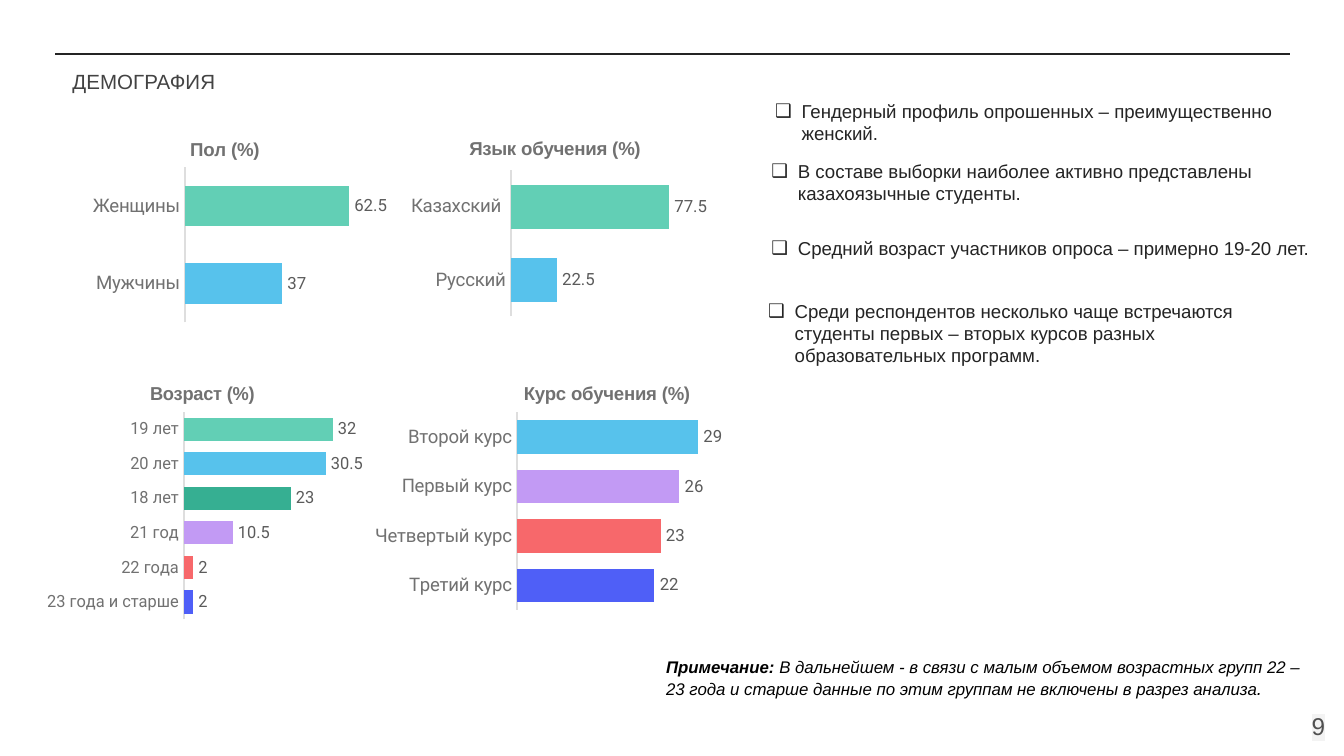
from dataclasses import dataclass
from typing import Any

from lxml import etree
from pptx import Presentation
from pptx import util as u
from pptx.chart import data as cd
from pptx.dml.color import RGBColor
from pptx.enum import chart as ch
from pptx.enum import shapes, text
from pptx.oxml import ns

Box = tuple[float, float, float, float]


@dataclass(frozen=True)
class Theme:
    font: str = "Arial"
    chart_font: str = "Roboto"
    ink: str = "242424"
    heading: str = "434343"
    muted: str = "717171"
    value: str = "5B5B5B"
    number: str = "505050"
    note: str = "000000"
    number_back: str = "F3F3F3"
    axis: str = "DEDEDE"
    mint: str = "62CFB5"
    sky: str = "57C2EC"
    teal: str = "36AF92"
    lilac: str = "C29AF4"
    coral: str = "F7686B"
    indigo: str = "4F5FF7"
    small: int = 9
    body: int = 10
    title: int = 11
    page: int = 13


T = Theme()


@dataclass(frozen=True)
class BarPanel:
    title: str
    box: Box
    bars: dict[str, tuple[float, str]]
    plot: Box
    title_at: tuple[float, float]
    top_value: float
    gap: int
    label_size: int = T.body


@dataclass(frozen=True)
class Bullet:
    text: str
    box: Box


PANELS = [
    BarPanel("Пол (%)", (0.89, 2.18, 6.6, 4.39),
             {"Мужчины": (37, T.sky), "Женщины": (62.5, T.mint)},
             (0.395, 0.224, 0.526, 0.668), (0.4, 0.08), 70, 90),
    BarPanel("Язык обучения (%)", (7.09, 2.18, 6.6, 4.14),
             {"Русский": (22.5, T.sky), "Казахский ": (77.5, T.mint)},
             (0.389, 0.25, 0.526, 0.668), (0.26, 0.08), 90, 66),
    BarPanel("Возраст (%)", (0.46, 6.88, 6.4, 5.41),
             {"23 года и старше": (2, T.indigo), "22 года": (2, T.coral),
              "21 год": (10.5, T.lilac), "18 лет": (23, T.teal),
              "20 лет": (30.5, T.sky), "19 лет": (32, T.mint)},
             (0.483, 0.168, 0.506, 0.724), (0.37, 0.05), 36, 48, T.small),
    BarPanel("Курс обучения (%)", (7.09, 6.88, 6.99, 5.16),
             {"Третий курс": (22, T.indigo), "Четвертый курс": (23, T.coral),
              "Первый курс": (26, T.lilac), "Второй курс": (29, T.sky)},
             (0.381, 0.178, 0.594, 0.724), (0.39, 0.05), 35, 48),
]

BULLETS = [
    Bullet("Гендерный профиль опрошенных – преимущественно женский.",
           (14.4, 1.63, 10.74, 10.64)),
    Bullet("В составе выборки наиболее активно представлены казахоязычные студенты.",
           (14.33, 2.77, 10.54, 8.59)),
    Bullet("Средний возраст участников опроса – примерно 19-20 лет.",
           (14.33, 4.27, 10.74, 6.68)),
    Bullet("Среди респондентов несколько чаще встречаются студенты первых – вторых "
           "курсов разных образовательных программ.", (14.27, 5.41, 10.54, 6.32)),
]


def cm(box: Box) -> list[u.Length]:
    """Turn a box of numbers into lengths."""
    return [u.Cm(v) for v in box]


def apply(target: Any, values: dict[str, Any]) -> None:
    """Set every named attribute on the target."""
    for name, value in values.items():
        setattr(target, name, value)


def style(font: Any, size: int, color: str, name: str = T.font, **extra: Any) -> None:
    """Format a font."""
    apply(font, {"size": u.Pt(size), "name": name, **extra})
    font.color.rgb = RGBColor.from_string(color)


def add_xml(parent: Any, tag: str, **attrs: str) -> Any:
    """Append a namespaced element."""
    return etree.SubElement(parent, ns.qn(tag), attrs)


def add_text(s: Any, box: Box, pad: float = 0.25, **frame: Any) -> Any:
    """Add a wrapping text box and return its text frame."""
    tf = s.shapes.add_textbox(*cm(box)).text_frame
    margins = {f"margin_{side}": u.Cm(pad) for side in ("left", "top", "right", "bottom")}
    apply(tf, {"word_wrap": True, **margins, **frame})
    return tf


def add_run(p: Any, words: str, size: int, color: str, **extra: Any) -> Any:
    """Append a formatted run."""
    r = p.add_run()
    r.text = words
    style(r.font, size, color, **extra)
    return r


def add_bullet(s: Any, bullet: Bullet) -> None:
    """Add one finding with a hanging box bullet."""
    p = add_text(s, bullet.box).paragraphs[0]
    add_run(p, bullet.text, T.body, T.ink)
    pPr = p._p.get_or_add_pPr()
    apply_indent = {"marL": u.Cm(0.5), "indent": -u.Cm(0.5)}
    for name, value in apply_indent.items():
        pPr.set(name, str(value))
    add_xml(add_xml(pPr, "a:buClr"), "a:srgbClr", val=T.ink)
    add_xml(pPr, "a:buFont", typeface=T.font)
    add_xml(pPr, "a:buChar", char="❑")


def place(parent: Any, index: int, values: dict[str, float], inner: bool = False) -> None:
    """Give a chart part a manual layout."""
    for old in parent.findall(ns.qn("c:layout")):
        parent.remove(old)
    layout = etree.Element(ns.qn("c:layout"))
    manual = add_xml(layout, "c:manualLayout")
    if inner:
        add_xml(manual, "c:layoutTarget", val="inner")
    for mode in ("c:xMode", "c:yMode"):
        add_xml(manual, mode, val="edge")
    for name, value in values.items():
        add_xml(manual, f"c:{name}", val=str(value))
    parent.insert(index, layout)


def add_bars(s: Any, panel: BarPanel) -> None:
    """Add a horizontal bar chart with one colour per bar."""
    data = cd.CategoryChartData()
    data.categories = list(panel.bars)
    data.add_series("Series 1", [value for value, _ in panel.bars.values()])
    chart = s.shapes.add_chart(ch.XL_CHART_TYPE.BAR_CLUSTERED, *cm(panel.box), data).chart
    apply(chart, {"has_legend": False, "has_title": True})
    style(chart.font, T.body, T.ink)
    add_run(chart.chart_title.text_frame.paragraphs[0], panel.title, T.body, T.muted, bold=True)

    cat, val = chart.category_axis, chart.value_axis
    apply(cat, {"major_tick_mark": ch.XL_TICK_MARK.NONE, "has_major_gridlines": False})
    style(cat.tick_labels.font, panel.label_size, T.muted, T.chart_font)
    cat.format.line.color.rgb = RGBColor.from_string(T.axis)
    cat.format.line.width = u.Pt(0.75)
    apply(val, {"minimum_scale": 0, "maximum_scale": panel.top_value,
                "has_major_gridlines": False, "visible": False})

    plot = chart.plots[0]
    apply(plot, {"gap_width": panel.gap, "vary_by_categories": False, "has_data_labels": True})
    apply(plot.data_labels, {"show_value": True, "position": ch.XL_LABEL_POSITION.OUTSIDE_END})
    style(plot.data_labels.font, T.small, T.value, T.chart_font)
    for i, (_, color) in enumerate(panel.bars.values()):
        fill = plot.series[0].points[i].format.fill
        fill.solid()
        fill.fore_color.rgb = RGBColor.from_string(color)

    root = chart._chartSpace
    place(root.xpath("c:chart/c:title")[0], 1, dict(zip("xy", panel.title_at)))
    place(root.xpath("c:chart/c:plotArea")[0], 0, dict(zip("xywh", panel.plot)), inner=True)


def main() -> None:
    """Build the demography slide."""
    prs = Presentation()
    apply(prs, {"slide_width": u.Cm(25.4), "slide_height": u.Cm(14.29)})
    s = prs.slides.add_slide(prs.slide_layouts[6])

    rule = s.shapes.add_connector(shapes.MSO_CONNECTOR.STRAIGHT, *cm((1.04, 1.02, 24.38, 1.02)))
    rule.line.color.rgb = RGBColor.from_string(T.ink)
    rule.line.width = u.Pt(0.75)
    add_xml(rule._element.spPr, "a:effectLst")

    heading = add_text(s, (1.12, 1.07, 11.23, 4.14))
    add_run(heading.paragraphs[0], "ДЕМОГРАФИЯ", T.title, T.heading)

    page = add_text(s, (23.77, 13.18, 1.52, 1.09), vertical_anchor=text.MSO_ANCHOR.MIDDLE)
    p = page.paragraphs[0]
    p.alignment = text.PP_ALIGN.RIGHT
    r = add_run(p, "9", T.page, T.number)
    highlight = etree.Element(ns.qn("a:highlight"))
    add_xml(highlight, "a:srgbClr", val=T.number_back)
    r.font._element.find(ns.qn("a:solidFill")).addnext(highlight)

    for panel in PANELS:
        add_bars(s, panel)
    for bullet in BULLETS:
        add_bullet(s, bullet)

    note = add_text(s, (12.34, 12.29, 12.95, 1.07), margin_top=u.Cm(0.13),
                    margin_bottom=u.Cm(0.13), margin_right=u.Cm(0.4)).paragraphs[0]
    add_run(note, "Примечание: ", T.small, T.note, bold=True, italic=True)
    add_run(note, "В дальнейшем - в связи с малым объемом возрастных групп 22 – 23 года и старше "
            "данные по этим группам не включены в разрез анализа", T.small, T.note, italic=True)
    add_run(note, ".", T.body, T.note, italic=True)
    prs.save("out.pptx")


if __name__ == "__main__":
    main()
